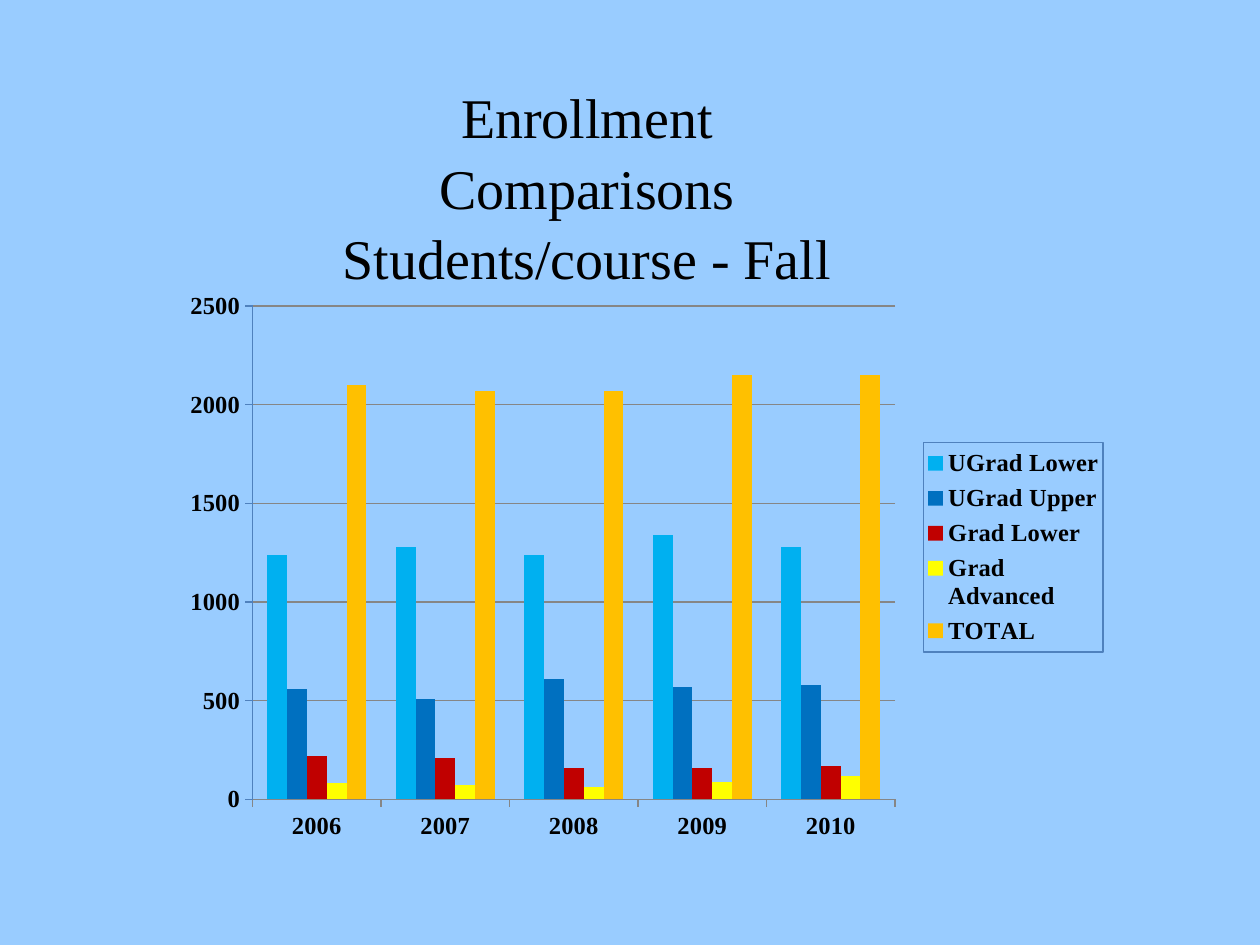
from lxml import etree
from pptx import Presentation
from pptx.chart.data import CategoryChartData
from pptx.dml.color import RGBColor
from pptx.enum.chart import XL_CHART_TYPE, XL_LEGEND_POSITION, XL_TICK_MARK
from pptx.enum.text import MSO_ANCHOR, MSO_AUTO_SIZE, PP_ALIGN
from pptx.oxml.ns import qn
from pptx.util import Inches, Pt

CLUSTERED = XL_CHART_TYPE.COLUMN_CLUSTERED
LEGEND_RIGHT = XL_LEGEND_POSITION.RIGHT
TICK_OUTSIDE = XL_TICK_MARK.OUTSIDE
CENTER = PP_ALIGN.CENTER
TOP = MSO_ANCHOR.TOP
NO_AUTOFIT = MSO_AUTO_SIZE.NONE
TITLE_ONLY = 5

COLORS = {
    "background": "99CCFF",
    "text": "000000",
    "grid": "868686",
    "border": "4F81BD",
    "UGrad Lower": "00B0F0",
    "UGrad Upper": "0070C0",
    "Grad Lower": "C00000",
    "Grad Advanced": "FFFF00",
    "TOTAL": "FFC000",
}
YEARS = ["2006", "2007", "2008", "2009", "2010"]
ENROLLMENT = {
    "UGrad Lower": [1240, 1280, 1240, 1340, 1280],
    "UGrad Upper": [560, 510, 610, 570, 580],
    "Grad Lower": [220, 210, 160, 160, 170],
    "Grad Advanced": [80, 70, 60, 90, 120],
    "TOTAL": [2100, 2070, 2070, 2150, 2150],
}


def color(name):
    return RGBColor.from_string(COLORS[name])


def set_layout(element, x, y, w, h, inner=False):
    """Place a chart part by fractions of the chart area."""
    for old in element.findall(qn("c:layout")):
        element.remove(old)
    layout = etree.Element(qn("c:layout"))
    manual = etree.SubElement(layout, qn("c:manualLayout"))
    settings = [("layoutTarget", "inner")] if inner else []
    settings += [("xMode", "edge"), ("yMode", "edge"),
                 ("x", x), ("y", y), ("w", w), ("h", h)]
    for tag, value in settings:
        etree.SubElement(manual, qn(f"c:{tag}")).set("val", str(value))
    position = element.find(qn("c:legendPos"))
    if position is None:
        element.insert(0, layout)
    else:
        position.addnext(layout)


class SlideBuilder:
    font_name = "Times New Roman"

    def __init__(self, slide):
        self.slide = slide
        fill = slide.background.fill
        fill.solid()
        fill.fore_color.rgb = color("background")

    def style_font(self, font, size, bold=False):
        font.name = self.font_name
        font.size = Pt(size)
        font.bold = bold
        font.color.rgb = color("text")

    def style_line(self, line, name):
        line.color.rgb = color(name)
        line.width = Pt(0.75)

    def title(self, lines, left, top, width, height):
        title = self.slide.shapes.title
        title.left, title.top = Inches(left), Inches(top)
        title.width, title.height = Inches(width), Inches(height)
        frame = title.text_frame
        frame.text = "\n".join(lines)
        frame.word_wrap = True
        frame.auto_size = NO_AUTOFIT
        frame.vertical_anchor = TOP
        frame.margin_left = frame.margin_top = Inches(0.05)
        frame.margin_right = Inches(0.63)
        for paragraph in frame.paragraphs:
            paragraph.alignment = CENTER
            paragraph.line_spacing = 1.05
            paragraph.space_before = Pt(0)
            self.style_font(paragraph.font, 32)

    def column_chart(self, categories, series, left, top, width, height):
        data = CategoryChartData()
        data.categories = categories
        for name, values in series.items():
            data.add_series(name, values)
        chart = self.slide.shapes.add_chart(
            CLUSTERED, Inches(left), Inches(top),
            Inches(width), Inches(height), data).chart
        chart.has_title = False
        self.style_font(chart.font, 10)

        plot = chart.plots[0]
        plot.gap_width = 150
        plot.overlap = 0
        plot.vary_by_categories = False
        for columns in plot.series:
            columns.format.fill.solid()
            columns.format.fill.fore_color.rgb = color(columns.name)

        for axis, line in ((chart.category_axis, "grid"),
                           (chart.value_axis, "border")):
            axis.major_tick_mark = TICK_OUTSIDE
            self.style_font(axis.tick_labels.font, 14, bold=True)
            self.style_line(axis.format.line, line)
        scale = chart.value_axis
        scale.minimum_scale, scale.maximum_scale = 0, 2500
        scale.major_unit = 500
        self.style_line(scale.major_gridlines.format.line, "grid")
        self.legend(chart)
        set_layout(chart.plots[0]._element.getparent(),
                   0.09, 0.04, 0.68, 0.87, inner=True)

    def legend(self, chart):
        chart.has_legend = True
        legend = chart.legend
        legend.position = LEGEND_RIGHT
        legend.include_in_layout = False
        self.style_font(legend.font, 14, bold=True)
        element = legend._element
        set_layout(element, 0.8, 0.28, 0.19, 0.37)
        properties = etree.Element(qn("c:spPr"))
        outline = etree.SubElement(properties, qn("a:ln"), w=str(Pt(0.75)))
        fill = etree.SubElement(outline, qn("a:solidFill"))
        etree.SubElement(fill, qn("a:srgbClr"), val=COLORS["border"])
        element.find(qn("c:txPr")).addprevious(properties)


def main():
    presentation = Presentation()
    presentation.slide_width = Inches(10)
    presentation.slide_height = Inches(7.5)
    layout = presentation.slide_layouts[TITLE_ONLY]
    builder = SlideBuilder(presentation.slides.add_slide(layout))
    builder.title(["Enrollment Comparisons", "Students/course - Fall"],
                  2.62, 0.58, 4.66, 1.17)
    builder.column_chart(YEARS, ENROLLMENT, 1.33, 2.25, 7.5, 4.5)
    presentation.save("out.pptx")


if __name__ == "__main__":
    main()
